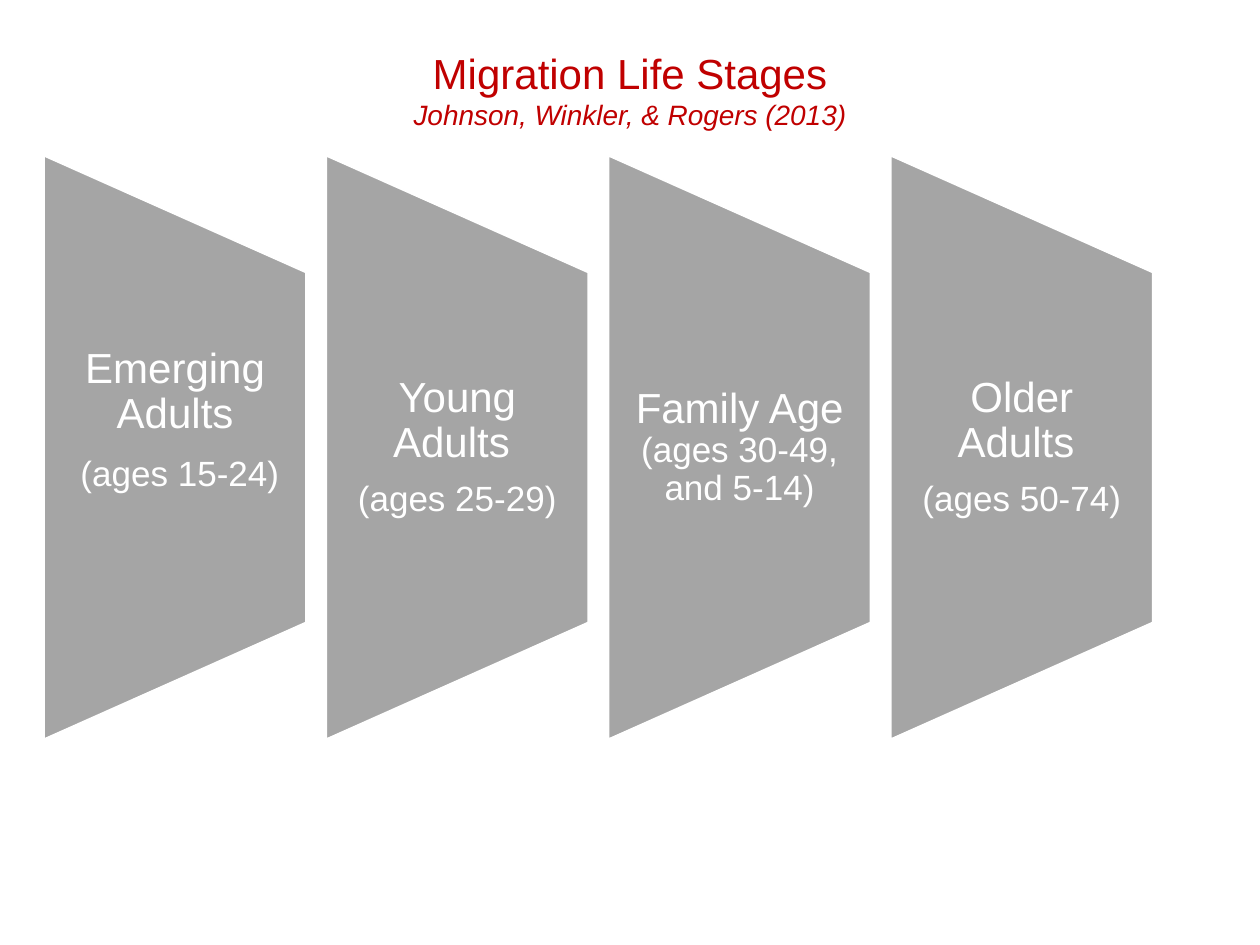
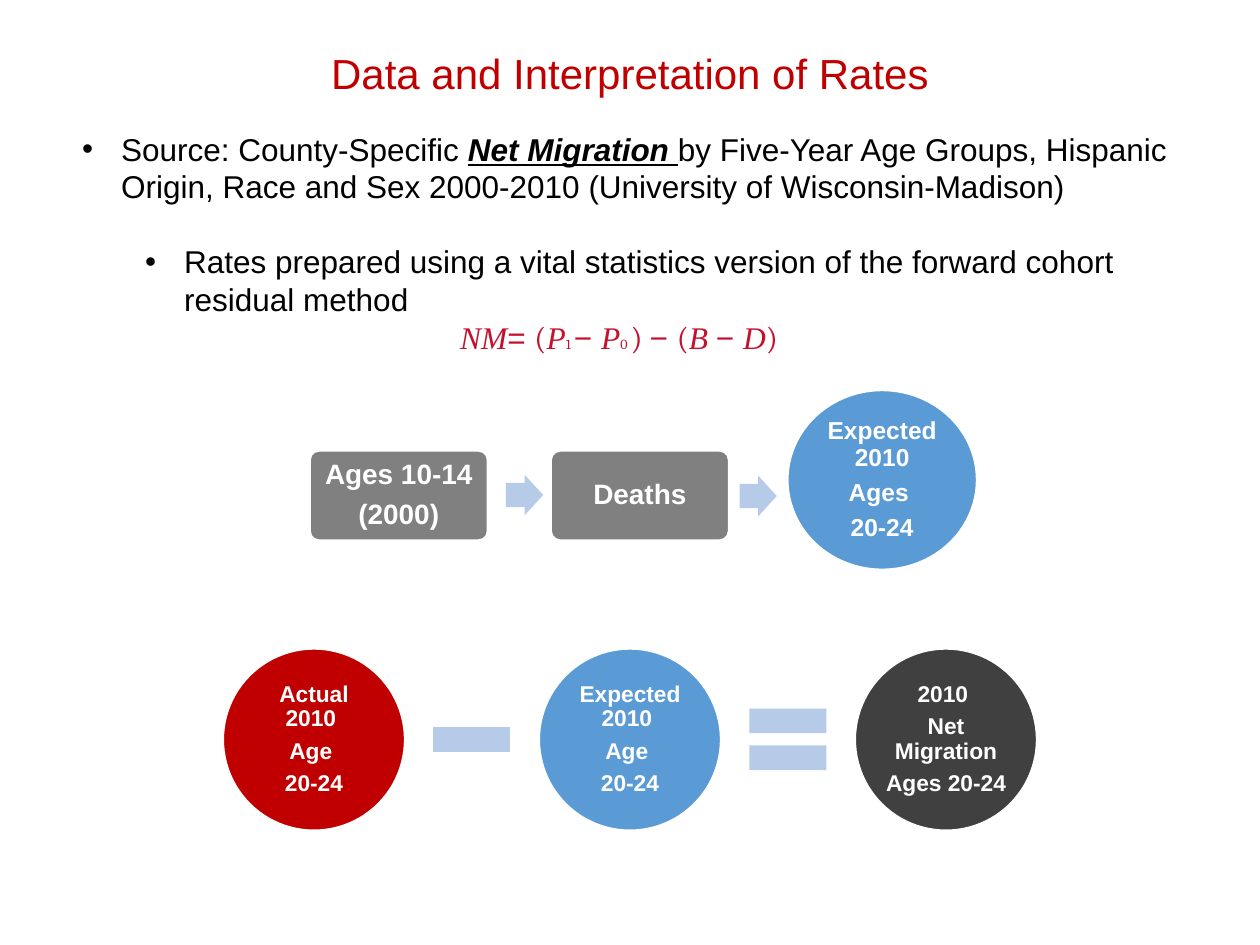
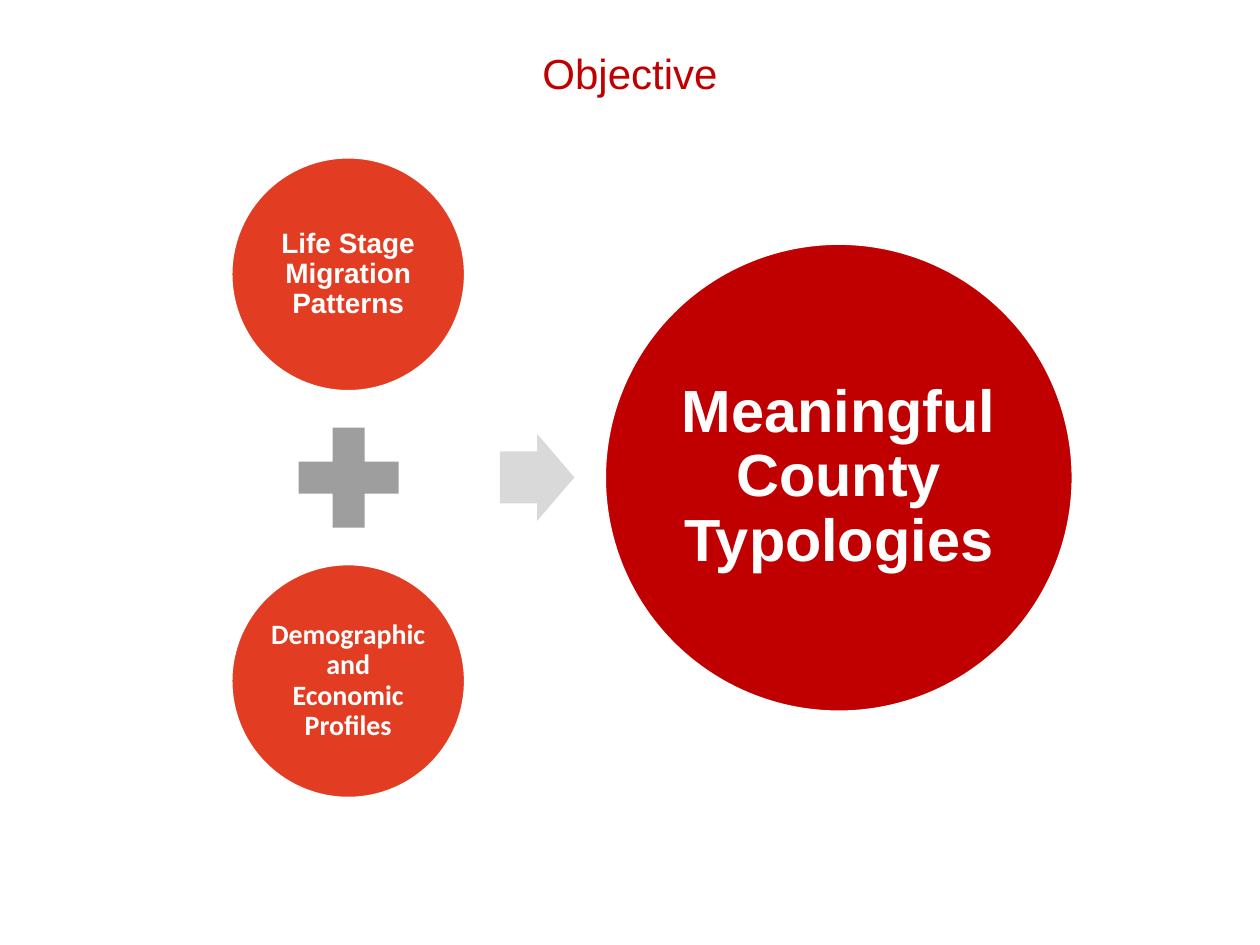
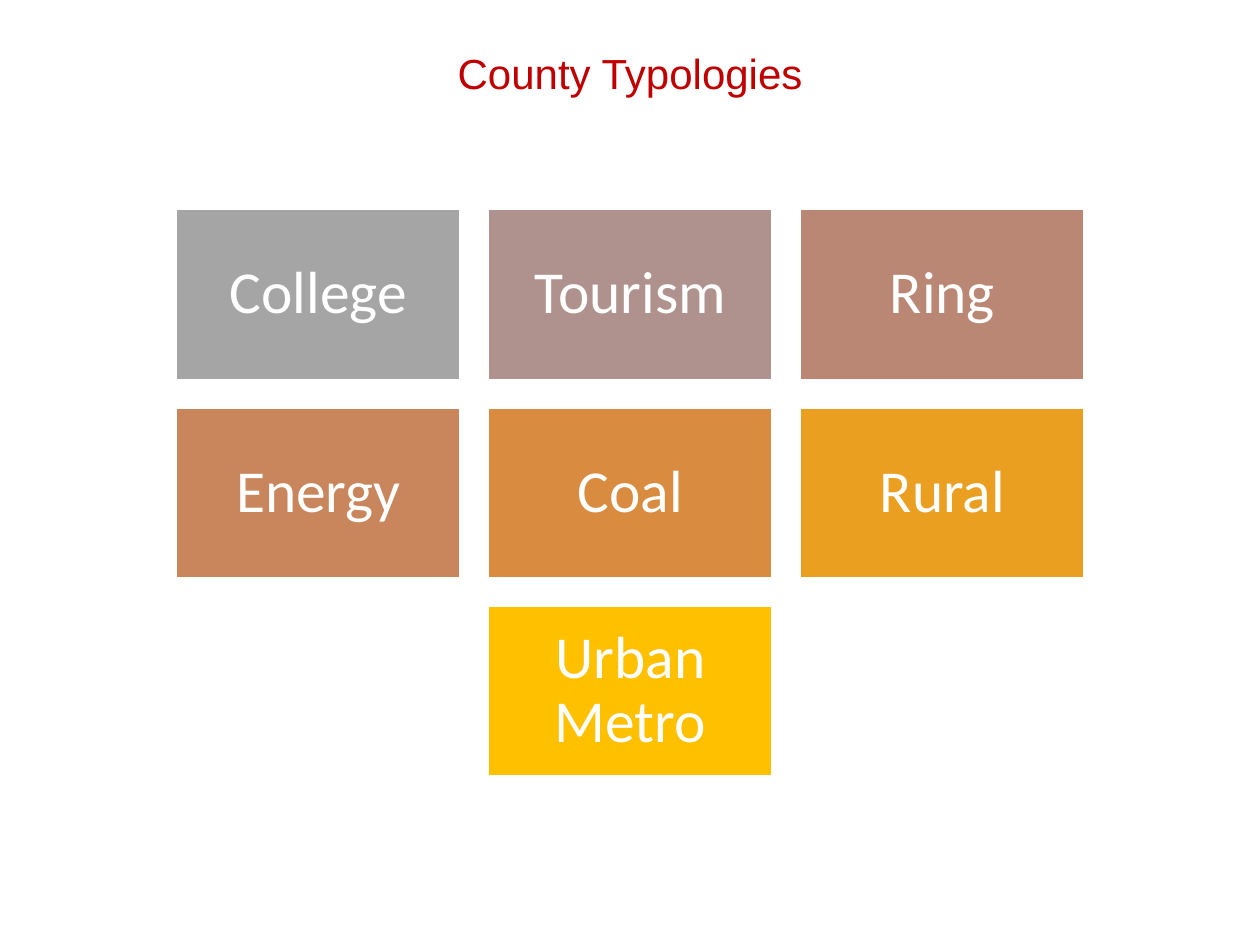
from lxml import etree
from pptx import Presentation
from pptx.dml.color import RGBColor
from pptx.enum import shapes as kinds, text as t
from pptx.oxml import ns
from pptx.util import Cm, Pt

WHITE = RGBColor(0xFF, 0xFF, 0xFF)
BLACK = RGBColor(0, 0, 0)
RED = RGBColor(0xC0, 0, 0)
CRIMSON = RGBColor(0xC3, 0x12, 0x2E)
ORANGE_RED = RGBColor(0xE2, 0x3D, 0x22)
BLUE = RGBColor(0x5B, 0x9B, 0xD5)
PALE_BLUE = RGBColor(0xB5, 0xCB, 0xE7)
CHARCOAL = RGBColor(0x40, 0x40, 0x40)
GRAY = RGBColor(0x80, 0x80, 0x80)
STAGE_GRAY = RGBColor(0xA5, 0xA5, 0xA5)
PLUS_GRAY = RGBColor(0x9E, 0x9E, 0x9E)
ARROW_GRAY = RGBColor(0xD9, 0xD9, 0xD9)
TYPOLOGIES = [
    ("College", STAGE_GRAY),
    ("Tourism", RGBColor(0xAF, 0x92, 0x8E)),
    ("Ring", RGBColor(0xBB, 0x87, 0x75)),
    ("Energy", RGBColor(0xC9, 0x85, 0x5C)),
    ("Coal", RGBColor(0xD9, 0x8B, 0x3F)),
    ("Rural", RGBColor(0xEB, 0x9F, 0x21)),
    ("Urban Metro", RGBColor(0xFF, 0xC0, 0)),
]
KIND = kinds.MSO_SHAPE


def write(frame, text, size, color=WHITE, font="Arial", bold=False, italic=False,
          underline=False, join=False, align=t.PP_ALIGN.CENTER, spacing=0.9,
          before=0, after=None):
    paragraph = frame.paragraphs[-1]
    if not join:
        if paragraph.runs:
            paragraph = frame.add_paragraph()
        paragraph.alignment = align
        paragraph.line_spacing = spacing
        paragraph.space_before = Pt(before)
        paragraph.space_after = Pt(size * 0.35 if after is None else after)
    run = paragraph.add_run()
    run.text = text
    run.font.size = Pt(size)
    run.font.name = font
    run.font.bold = bold
    run.font.italic = italic
    run.font.underline = underline
    run.font.color.rgb = color
    return paragraph


def add_part(slide, kind, left, top, width, height, fill, outlined=True, inset=0.05):
    part = slide.shapes.add_shape(kind, Cm(left), Cm(top), Cm(width), Cm(height))
    part.shadow.inherit = False
    part.fill.solid()
    part.fill.fore_color.rgb = fill
    if outlined:
        part.line.color.rgb = WHITE
        part.line.width = Pt(1)
    else:
        part.line.fill.background()
    frame = part.text_frame
    frame.word_wrap = True
    frame.vertical_anchor = t.MSO_ANCHOR.MIDDLE
    frame.margin_left = frame.margin_right = Cm(inset)
    frame.margin_top = frame.margin_bottom = Cm(inset)
    return part


deck = Presentation()
deck.slide_width, deck.slide_height = Cm(25.4), Cm(19.05)

TITLE_ONLY, TITLE_AND_BODY = deck.slide_layouts[5], deck.slide_layouts[1]
pages = []
for heading, layout in [
    ("Migration Life Stages", TITLE_ONLY),
    ("Data and Interpretation of Rates", TITLE_AND_BODY),
    ("Objective", TITLE_ONLY),
    ("County Typologies", TITLE_ONLY),
]:
    page = deck.slides.add_slide(layout)
    title = page.shapes.title
    title.left, title.top, title.width, title.height = Cm(0), Cm(0.83), Cm(25.4), Cm(3.3)
    title.text_frame.auto_size = t.MSO_AUTO_SIZE.NONE
    title.text_frame.vertical_anchor = t.MSO_ANCHOR.TOP
    write(title.text_frame, heading, 24, RED, spacing=1.0, after=0)
    pages.append(page)
stages_page, rates_page, objective_page, typologies_page = pages

write(stages_page.shapes.title.text_frame, "Johnson, Winkler, & Rogers (2013)", 16, RED,
      italic=True, spacing=1.0, after=0)
STAGE_WIDTH, STAGE_LENGTH = 5.28, 11.76
stages = [
    ("Emerging Adults", " (ages 15-24)", False, 0.54, 11),
    ("Young Adults ", "(ages 25-29)", False, 0, 8.4),
    ("Family Age ", "(ages 30-49, and 5-14)", True, 0, 8.4),
    ("Older Adults ", "(ages 50-74)", False, 0, 8.4),
]
for column, (stage, ages, same_paragraph, raised, gap) in enumerate(stages):
    left = 0.89 + 5.69 * column
    panel = add_part(stages_page, KIND.FLOWCHART_MANUAL_OPERATION,
                     left + (STAGE_WIDTH - STAGE_LENGTH) / 2, 6.38,
                     STAGE_LENGTH, STAGE_WIDTH, STAGE_GRAY)
    panel.rotation = 270
    label = stages_page.shapes.add_textbox(Cm(left), Cm(5.49 - raised),
                                           Cm(STAGE_WIDTH), Cm(7.06)).text_frame
    label.word_wrap = True
    label.vertical_anchor = t.MSO_ANCHOR.MIDDLE
    label.margin_left = label.margin_right = Cm(0.43)
    label.margin_top = label.margin_bottom = Cm(0)
    write(label, stage, 24, after=gap)
    write(label, ages, 20, join=same_paragraph)

body = rates_page.placeholders[1]
body.left, body.top, body.width, body.height = Cm(1.4), Cm(2.49), Cm(22.6), Cm(7.19)
notes = body.text_frame
notes.auto_size = t.MSO_AUTO_SIZE.NONE
listing = dict(align=t.PP_ALIGN.LEFT, spacing=Pt(21.5), after=0)
source = write(notes, "Source: County-Specific ", 18, BLACK, **listing)
write(notes, "Net Migration ", 18, BLACK, bold=True, italic=True, underline=True, join=True)
write(notes, "by Five-Year Age Groups, Hispanic Origin, Race and Sex 2000-2010 "
      "(University of Wisconsin-Madison)", 18, BLACK, join=True)
method = write(notes, "Rates prepared using a vital statistics version of the forward "
               "cohort residual method", 18, BLACK, before=21.5, **listing)
formula = write(notes, "NM", 18, CRIMSON, "Times New Roman", italic=True, **listing)
for symbol, font, size in [
    ("= ", "Arial", 18), ("(", "Cambria", 18), ("P", "Times New Roman", 18),
    ("1 ", "Cambria", 8), ("− ", "Arial", 18), ("P", "Times New Roman", 18),
    ("0 ", "Cambria", 8), (") ", "Cambria", 18), ("− ", "Arial", 18),
    ("(", "Cambria", 18), ("B ", "Times New Roman", 18), ("− ", "Arial", 18),
    ("D", "Times New Roman", 18), (")", "Cambria", 18),
]:
    write(notes, symbol, size, CRIMSON, font, italic=font == "Times New Roman", join=True)
for paragraph, level, margin, hanging, bullet in [
    (source, 0, 0.79, 0.79, "•"), (method, 1, 2.06, 0.79, "•"), (formula, 2, 7.62, 0, None),
]:
    paragraph.level = level
    properties = paragraph._p.get_or_add_pPr()
    properties.set("marL", str(Cm(margin)))
    properties.set("indent", str(-Cm(hanging)))
    if bullet:
        etree.SubElement(properties, ns.qn("a:buFont")).set("typeface", "Arial")
        etree.SubElement(properties, ns.qn("a:buChar")).set("char", bullet)
    else:
        etree.SubElement(properties, ns.qn("a:buNone"))

for left, lines in [(6.25, ["Ages 10-14", "(2000)"]), (11.11, ["Deaths"])]:
    step = add_part(rates_page, KIND.ROUNDED_RECTANGLE, left, 9.09, 3.58, 1.8, GRAY, inset=0.23)
    step.adjustments[0] = 0.1
    for line in lines:
        write(step.text_frame, line, 16, bold=True)
for page, left, top, width, height, color in [
    (rates_page, 10.2, 9.57, 0.75, 0.82, PALE_BLUE),
    (rates_page, 14.91, 9.59, 0.75, 0.82, PALE_BLUE),
    (objective_page, 10.08, 8.75, 1.5, 1.75, ARROW_GRAY),
]:
    arrow = add_part(page, KIND.RIGHT_ARROW, left, top, width, height, color, outlined=False)
    arrow.adjustments[0], arrow.adjustments[1] = 0.6, 0.5
expected = add_part(rates_page, KIND.OVAL, 15.88, 7.87, 3.81, 3.61, BLUE, inset=0.2)
for line in ["Expected 2010", "Ages ", "20-24"]:
    write(expected.text_frame, line, 14, bold=True)

TERM_LEFT, TERM_PITCH = 4.5, 6.37
terms = [
    (RED, ["Actual 2010 ", "Age ", "20-24"]),
    (BLUE, ["Expected 2010 ", "Age ", "20-24"]),
    (CHARCOAL, ["2010 ", "Net Migration", "Ages 20-24"]),
]
for column, (color, lines) in enumerate(terms):
    term = add_part(rates_page, KIND.OVAL, TERM_LEFT + TERM_PITCH * column, 13.08,
                    3.66, 3.66, color)
    for line in lines:
        write(term.text_frame, line, 13, bold=True)
for column, operator in enumerate([KIND.MATH_MINUS, KIND.MATH_EQUAL]):
    add_part(rates_page, operator, 8.46 + TERM_PITCH * column, 13.85, 2.11, 2.11,
             PALE_BLUE, outlined=False)

add_part(objective_page, KIND.MATH_PLUS, 5.66, 8.26, 2.74, 2.74, PLUS_GRAY, outlined=False)
for text, left, top, diameter, color, size, font, inset in [
    ("Life Stage Migration Patterns", 4.67, 3.18, 4.7, ORANGE_RED, 16, "Arial", 0.05),
    ("Demographic and Economic Profiles", 4.67, 11.38, 4.7, ORANGE_RED, 16, "Calibri", 0.05),
    ("Meaningful County Typologies", 12.2, 4.92, 9.42, RED, 34, "Arial", 0.13),
]:
    circle = add_part(objective_page, KIND.OVAL, left, top, diameter, diameter, color, inset=inset)
    write(circle.text_frame, text, size, font=font, bold=True)

for index, (typology, color) in enumerate(TYPOLOGIES):
    row, column = divmod(index, 3)
    if index == len(TYPOLOGIES) - 1:
        column = 1
    tile = add_part(typologies_page, KIND.RECTANGLE, 3.56 + 6.29 * column, 4.22 + 4 * row,
                    5.72, 3.43, color, inset=0.36)
    write(tile.text_frame, typology, 34, font="Calibri")

deck.save("out.pptx")
